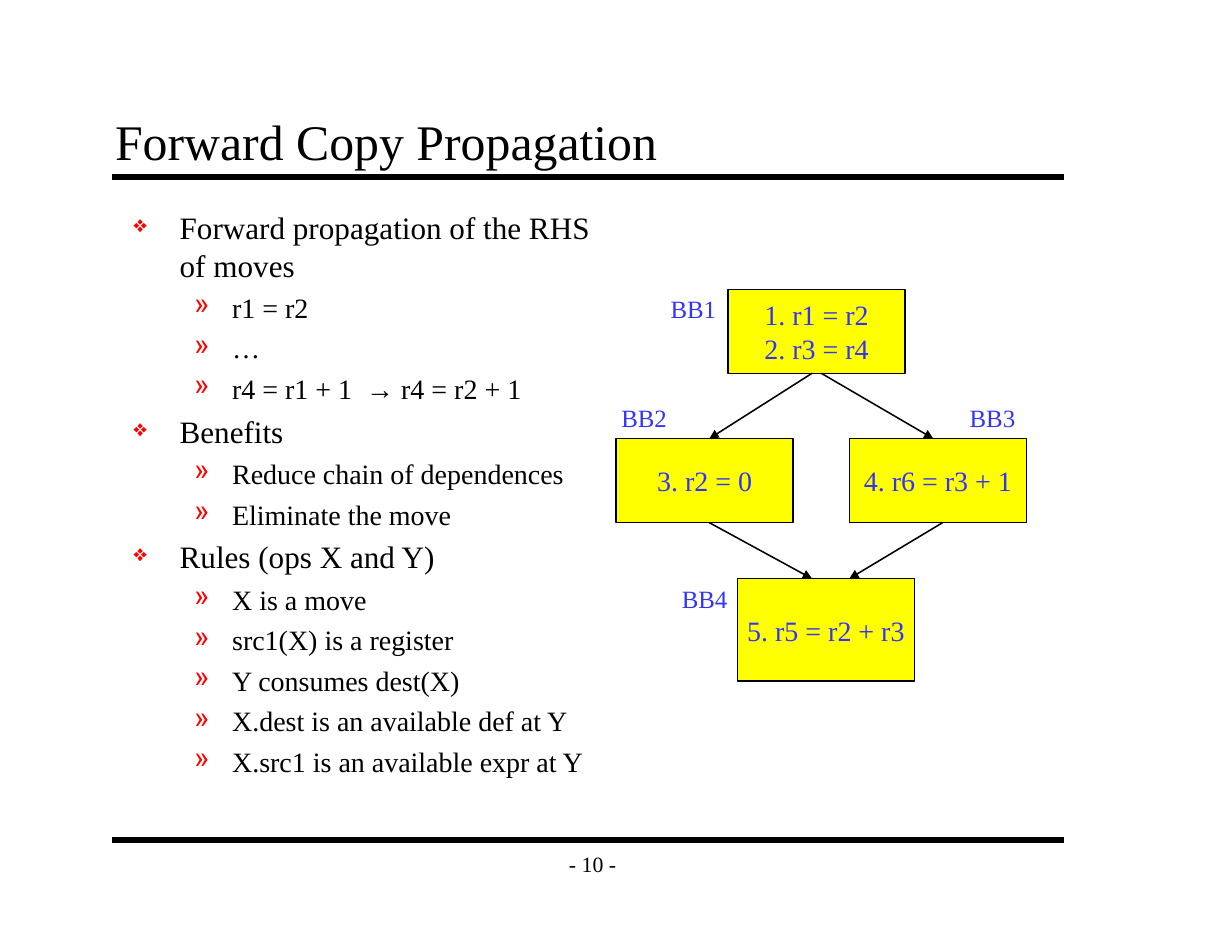
"""Build the forward copy propagation slide."""
from lxml.etree import SubElement
from pptx import Presentation
from pptx.dml.color import RGBColor
from pptx.enum.shapes import MSO_CONNECTOR, MSO_SHAPE
from pptx.enum.text import MSO_ANCHOR, MSO_AUTO_SIZE, PP_ALIGN
from pptx.oxml.ns import qn
from pptx.util import Pt

THEME = {
    "font": "Times New Roman",
    "ink": "000000", "blue": "3333FF", "fill": "FFFF00", "mark": "FF0000",
    "title": 32, "top": 20, "sub": 18, "node": 18, "tag": 16, "foot": 14,
    "rule": 4, "edge": 1,
}
TITLE = "Forward Copy Propagation"
FOOT = "- 10 -"
POINTS = [
    ("Forward propagation of the RHS of moves",
     ["r1 = r2", "…", "r4 = r1 + 1  → r4 = r2 + 1"]),
    ("Benefits", ["Reduce chain of dependences", "Eliminate the move"]),
    ("Rules (ops X and Y)",
     ["X is a move", "src1(X) is a register", "Y consumes dest(X)",
      "X.dest is an available def at Y", "X.src1 is an available expr at Y"]),
]
LEVELS = [
    {"size": "top", "char": "❖", "scale": 75, "left": 29.5, "hang": 29.5},
    {"size": "sub", "char": "»", "scale": 100, "left": 63.25, "hang": 24.5},
]
WIDE = 114
NODES = {
    "BB1": {"at": (468, 186), "tall": 54, "tag": (424, 185),
            "ops": ["1. r1 = r2", "2. r3 = r4"]},
    "BB2": {"at": (396, 282), "tall": 54, "tag": (392.4, 255.6),
            "ops": ["3. r2 = 0"]},
    "BB3": {"at": (546, 282), "tall": 54, "tag": (616.3, 255.6),
            "ops": ["4. r6 = r3 + 1"]},
    "BB4": {"at": (474, 372), "tall": 66, "tag": (431.3, 372),
            "ops": ["5. r5 = r2 + r3"]},
}
EDGES = [("BB1", -3, "BB2", 3), ("BB1", 3, "BB3", -3),
         ("BB2", 3, "BB4", -9), ("BB3", 3, "BB4", 15)]
RULES = [114, 540]
INSET = {"margin_left": Pt(8), "margin_right": Pt(8),
         "margin_top": Pt(4.5), "margin_bottom": Pt(4.5)}


def color(key):
    return RGBColor.from_string(THEME[key])


def apply(item, form):
    for key, value in form.items():
        setattr(item, key, value)


def write(frame, lines, size, ink="ink", align=PP_ALIGN.LEFT, **form):
    apply(frame, {"word_wrap": False, **form})
    for i, line in enumerate(lines):
        para = frame.paragraphs[0] if i == 0 else frame.add_paragraph()
        para.alignment = align
        style(para, line, size, ink)


def style(para, line, size, ink="ink"):
    run = para.add_run()
    run.text = line
    apply(run.font, {"name": THEME["font"], "size": Pt(THEME[size])})
    run.font.color.rgb = color(ink)


def box(slide, *place):
    return slide.shapes.add_textbox(*map(Pt, place)).text_frame


def bullet(para, line, level):
    para.space_before = Pt(4.5)
    style(para, line, level["size"])
    props = para._p.get_or_add_pPr()
    props.set("marL", str(Pt(level["left"])))
    props.set("indent", str(-Pt(level["hang"])))
    tint = SubElement(props, qn("a:buClr"))
    SubElement(tint, qn("a:srgbClr"), val=THEME["mark"])
    SubElement(props, qn("a:buSzPct"), val=str(level["scale"] * 1000))
    SubElement(props, qn("a:buChar"), char=level["char"])


def outline(slide):
    frame = box(slide, 78, 129.6, 324, 410.4)
    apply(frame, {"word_wrap": True, **INSET})
    rows = []
    for head, subs in POINTS:
        rows += [(head, 0)] + [(sub, 1) for sub in subs]
    for i, (line, depth) in enumerate(rows):
        para = frame.paragraphs[0] if i == 0 else frame.add_paragraph()
        para.level = depth
        bullet(para, line, LEVELS[depth])


def join(slide, start, end, width, arrow=False):
    link = slide.shapes.add_connector(
        MSO_CONNECTOR.STRAIGHT, *map(Pt, start + end))
    link.line.color.rgb = color("ink")
    link.line.width = Pt(THEME[width])
    if arrow:
        SubElement(link.line._get_or_add_ln(), qn("a:tailEnd"),
                   type="triangle")
    SubElement(link._element.spPr, qn("a:effectLst"))


def block(slide, node):
    shape = slide.shapes.add_shape(
        MSO_SHAPE.RECTANGLE, *map(Pt, (*node["at"], WIDE, node["tall"])))
    shape.shadow.inherit = False
    shape.fill.solid()
    shape.fill.fore_color.rgb = color("fill")
    shape.line.color.rgb = color("ink")
    shape.line.width = Pt(THEME["edge"])
    write(shape.text_frame, node["ops"], "node", "blue", PP_ALIGN.CENTER,
          vertical_anchor=MSO_ANCHOR.MIDDLE)


def graph(slide):
    for node in NODES.values():
        block(slide, node)
    for head, out, tail, into in EDGES:
        (x, y), (u, v) = NODES[head]["at"], NODES[tail]["at"]
        start = (x + WIDE / 2 + out, y + NODES[head]["tall"])
        join(slide, start, (u + WIDE / 2 + into, v), "edge", True)
    for name, node in NODES.items():
        write(box(slide, *node["tag"], 44, 26.6), [name], "tag", "blue",
              auto_size=MSO_AUTO_SIZE.SHAPE_TO_FIT_TEXT)


def main():
    deck = Presentation()
    apply(deck, {"slide_width": Pt(792), "slide_height": Pt(612)})
    slide = deck.slides.add_slide(deck.slide_layouts[6])
    for y in RULES:
        join(slide, (72, y), (684, y), "rule")
    write(box(slide, 354, 540, 54, 30), [FOOT], "foot",
          align=PP_ALIGN.CENTER, vertical_anchor=MSO_ANCHOR.MIDDLE, **INSET)
    write(box(slide, 66, 66, 612, 48), [TITLE], "title",
          **{**INSET, "word_wrap": True,
             "vertical_anchor": MSO_ANCHOR.BOTTOM})
    outline(slide)
    graph(slide)
    deck.save("out.pptx")


if __name__ == "__main__":
    main()
